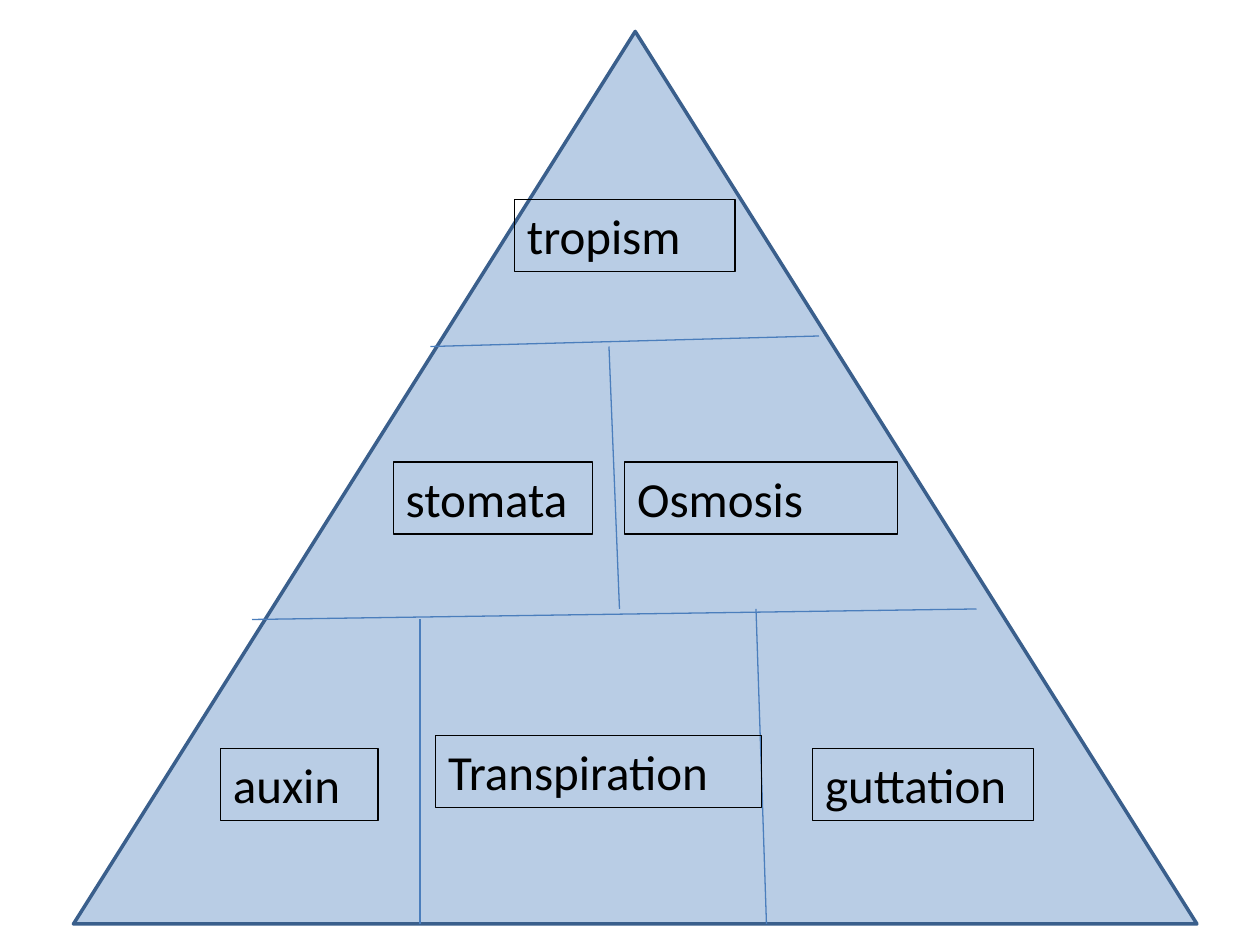
from lxml.etree import SubElement
from pptx import Presentation
from pptx.dml.color import RGBColor
from pptx.enum.shapes import MSO_CONNECTOR, MSO_SHAPE
from pptx.enum.text import MSO_AUTO_SIZE
from pptx.oxml.ns import qn
from pptx.util import Pt

FONT = "Calibri"
BLACK = "000000"
PYRAMID_FILL = "B9CDE5"
PYRAMID_LINE = "3A5F8C"
DIVIDER_LINE = "4B7EBC"
LABEL_HEIGHT = 41.2

# Heights at which the pyramid's tiers meet; the dividers tilt slightly.
TOP_LEFT, TOP_RIGHT = 198, 192
LOWER_LEFT, LOWER_RIGHT = 354, 348
BASE = 528

# Start x, start y, end x, end y
DIVIDERS = [
    (144, LOWER_LEFT, 558, LOWER_RIGHT),
    (246, TOP_LEFT, 468, TOP_RIGHT),
    (348, TOP_LEFT, 354, LOWER_RIGHT),
    (240, LOWER_LEFT, 240, BASE),
    (432, LOWER_RIGHT, 438, BASE),
]

# Word, left, top, width
LABELS = [
    ("Transpiration", 249, 420.4, 186),
    ("stomata", 224.8, 264, 114),
    ("guttation", 464.4, 427.6, 126),
    ("tropism", 294, 114, 126),
    ("Osmosis", 357, 264, 156),
    ("auxin", 126, 427.6, 90),
]


def color(hex_string):
    return RGBColor.from_string(hex_string)


def style_line(line, hex_string, width):
    line.color.rgb = color(hex_string)
    line.width = Pt(width)


def add_pyramid(slide, left, top, width, height):
    shape = slide.shapes.add_shape(
        MSO_SHAPE.ISOSCELES_TRIANGLE, Pt(left), Pt(top), Pt(width), Pt(height))
    shape.shadow.inherit = False
    shape.fill.solid()
    shape.fill.fore_color.rgb = color(PYRAMID_FILL)
    style_line(shape.line, PYRAMID_LINE, 2)


def add_divider(slide, *ends):
    connector = slide.shapes.add_connector(
        MSO_CONNECTOR.STRAIGHT, *(Pt(value) for value in ends))
    style_line(connector.line, DIVIDER_LINE, 0.75)
    SubElement(connector._element.spPr, qn("a:effectLst"))


def add_label(slide, word, left, top, width):
    box = slide.shapes.add_textbox(Pt(left), Pt(top), Pt(width), Pt(LABEL_HEIGHT))
    style_line(box.line, BLACK, 0.75)
    box.text_frame.word_wrap = True
    box.text_frame.auto_size = MSO_AUTO_SIZE.SHAPE_TO_FIT_TEXT
    run = box.text_frame.paragraphs[0].add_run()
    run.text = word
    run.font.name = FONT
    run.font.size = Pt(28)
    run.font.color.rgb = color(BLACK)


def main():
    presentation = Presentation()
    presentation.slide_width = Pt(720)
    presentation.slide_height = Pt(540)
    slide = presentation.slides.add_slide(presentation.slide_layouts[6])
    add_pyramid(slide, 42, 18, 642, BASE - 18)
    for divider in DIVIDERS:
        add_divider(slide, *divider)
    for label in LABELS:
        add_label(slide, *label)
    presentation.save("out.pptx")


if __name__ == "__main__":
    main()
